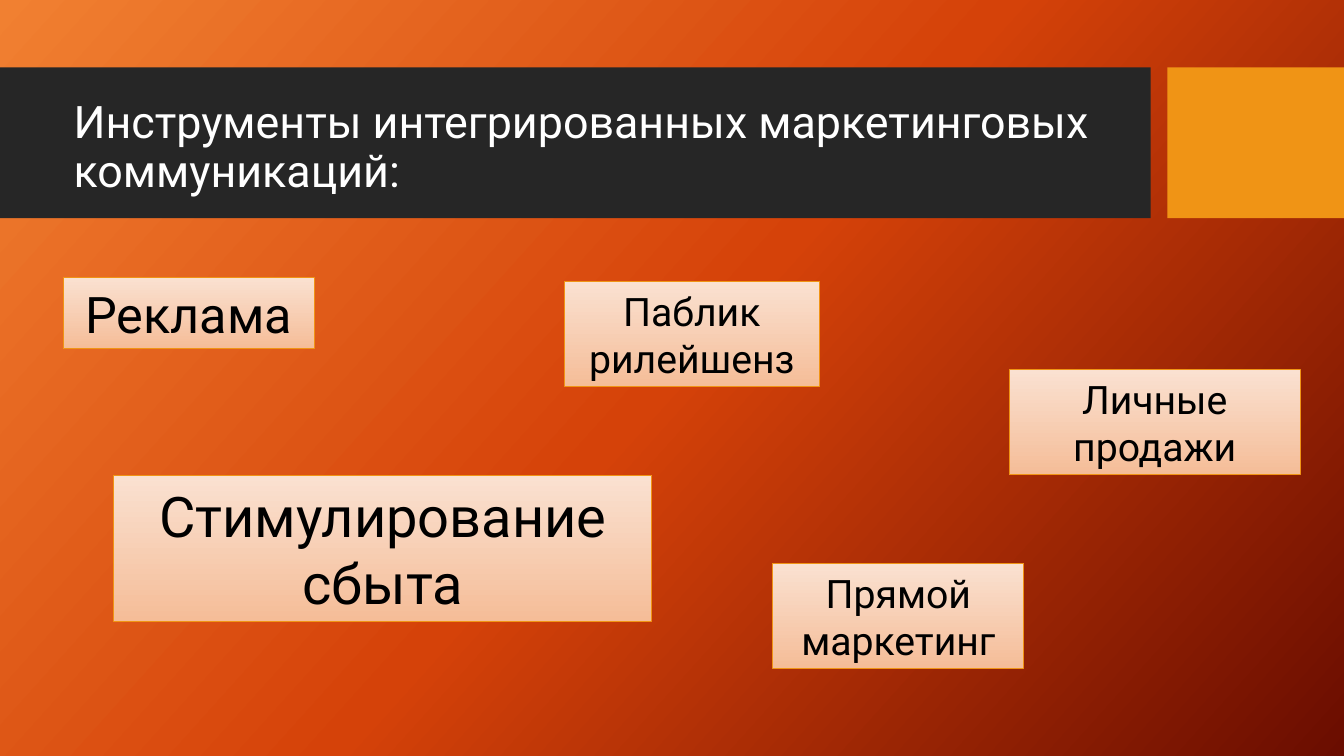
from copy import deepcopy

from pptx import Presentation
from pptx import util as u
from pptx.dml.color import RGBColor
from pptx.enum import shapes, text
from pptx.oxml.ns import qn

FONT = "Roboto"
COLORS = {
    "band": "262626", "accent": "F09415", "title": "FFFFFF", "label": "000000",
    "bg_start": "F18031", "bg_middle": "D54209", "bg_end": "6A0D00",
    "label_top": "FAE1D1", "label_bottom": "F5BD98",
}
TOOLS = [
    ("Реклама", 36, (1.6, 6.99, 6.32, 1.8)),
    ("Стимулирование сбыта", 40, (2.87, 11.98, 13.56, 3.68)),
    ("Паблик рилейшенз", 28, (14.22, 7.1, 6.43, 2.64)),
    ("Прямой маркетинг", 28, (19.48, 14.2, 6.32, 2.64)),
    ("Личные продажи", 28, (25.43, 9.32, 7.34, 2.64)),
]


def rgb(name):
    """Return the named colour."""
    return RGBColor.from_string(COLORS[name])


def set_gradient(fill, names, angle):
    """Fill with evenly spaced colours at a clockwise angle."""
    fill.gradient()
    fill.gradient_angle = 360 - angle
    stops = fill.gradient_stops
    for _ in names[2:]:
        last = stops[-1]._gs
        last.addnext(deepcopy(last))
        stops = fill.gradient_stops
    for i, (stop, name) in enumerate(zip(stops, names)):
        stop.position = i / (len(names) - 1)
        stop.color.rgb = rgb(name)


def set_text(tf, wording, size, color, align):
    """Write and format one paragraph."""
    tf.text = wording
    tf.word_wrap = True
    p = tf.paragraphs[0]
    p.alignment = align
    p.font.name, p.font.size = FONT, u.Pt(size)
    p.font.color.rgb = rgb(color)
    return p


def add_box(s, box):
    """Add a rectangle without shadow."""
    sp = s.shapes.add_shape(shapes.MSO_SHAPE.RECTANGLE, *map(u.Cm, box))
    sp.shadow.inherit = False
    return sp


def add_header(s, box):
    """Place the dark band, the accent block and the title in the box."""
    left, top, width, height = box
    accent_width, gap = 4.45, 0.42
    band_width = width - accent_width - gap
    for x, w, color in ((left, band_width, "band"),
                        (left + band_width + gap, accent_width, "accent")):
        sp = add_box(s, (x, top, w, height))
        sp.fill.solid()
        sp.fill.fore_color.rgb = rgb(color)
        sp.line.fill.background()

    title = s.shapes.title
    title.element.getparent().append(title.element)
    title.left, title.top = u.Cm(left + 1.6), u.Cm(top + 0.69)
    title.width, title.height = u.Cm(28.09), u.Cm(2.49)
    tf = title.text_frame
    p = set_text(tf, "Инструменты интегрированных маркетинговых коммуникаций:",
                 32, "title", text.PP_ALIGN.LEFT)
    p.line_spacing = 0.9
    tf.vertical_anchor = text.MSO_ANCHOR.TOP
    tf.auto_size = text.MSO_AUTO_SIZE.NONE


def add_label(s, wording, size, box):
    """Add one tool as a gradient label filling the box."""
    sp = add_box(s, box)
    set_gradient(sp.fill, ("label_top", "label_bottom"), 90)
    sp.line.color.rgb = rgb("accent")
    sp.line.width = u.Pt(0.75)
    set_text(sp.text_frame, wording, size, "label", text.PP_ALIGN.CENTER)
    sp.text_frame.auto_size = text.MSO_AUTO_SIZE.SHAPE_TO_FIT_TEXT


def main():
    """Build and save the slide."""
    prs = Presentation()
    prs.slide_width, prs.slide_height = u.Cm(33.87), u.Cm(19.05)
    s = prs.slides.add_slide(prs.slide_layouts[5])
    set_gradient(s.background.fill, ("bg_start", "bg_middle", "bg_end"), 42)
    add_header(s, (0, 1.7, 33.87, 3.8))
    for wording, size, box in TOOLS:
        add_label(s, wording, size, box)
    prs.save("out.pptx")


if __name__ == "__main__":
    main()
